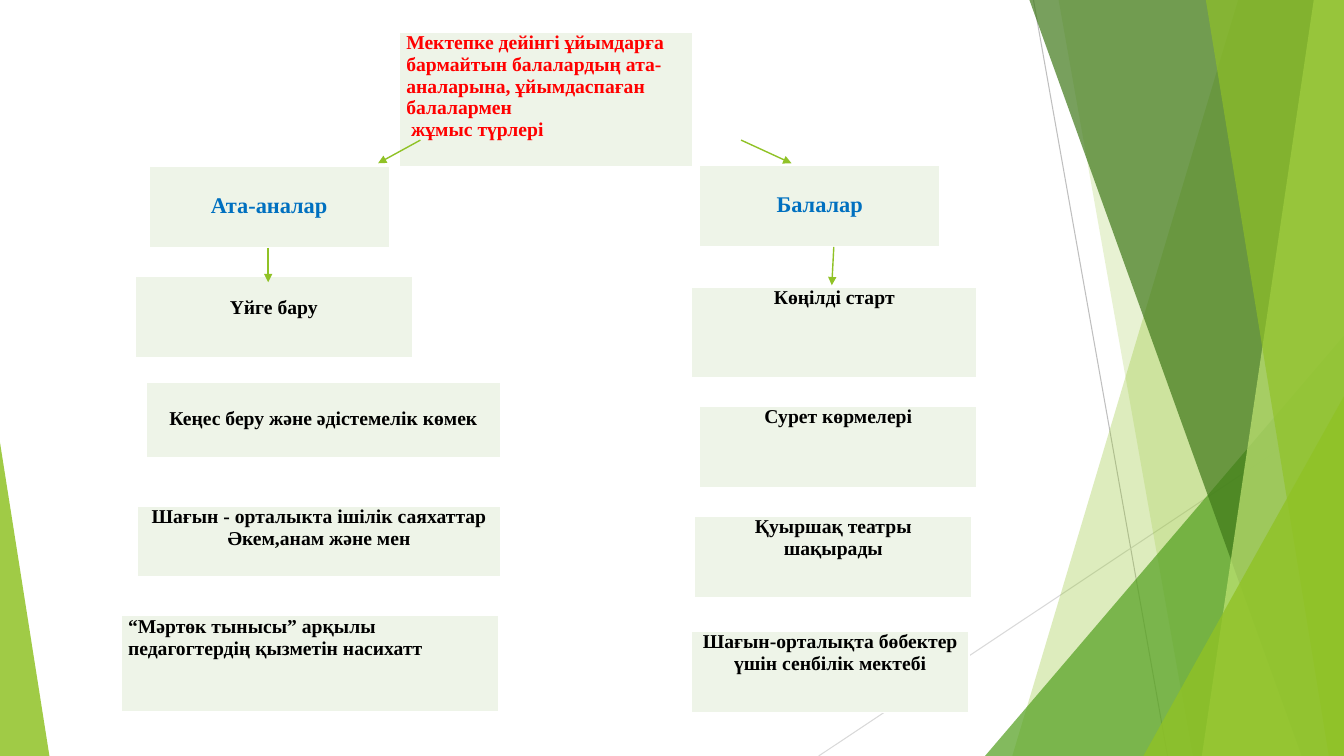
import pptx
import pptx.dml.color
import pptx.enum.shapes
import pptx.enum.text
import pptx.oxml
import pptx.oxml.ns
import pptx.util
from pptx.util import Inches

WIDE, HIGH = 13.33, 7.5
RED, BLUE, BLACK = "FF0000", "0070C0", "000000"
GREEN, PALE, WHITE = "90C226", "EEF4E8", "FFFFFF"
LEFT = pptx.enum.text.PP_ALIGN.LEFT
MID = pptx.enum.text.PP_ALIGN.CENTER

# Background, back to front: thin lines, then panels and triangles
RAYS = [
    ((10.25, 0), (11.58, HIGH), "BFBFBF"),
    ((WIDE, 4.03), (8.12, HIGH), "D9D9D9"),
]
# Panels reach the right edge: top x, bottom x, colour, opacity in percent
# Triangles: left, top, width, place of the tip, colour, opacity
DECOR = [
    ("panel", (12.28, 10.04), GREEN, 30),
    ("panel", (10.5, 11.83), GREEN, 20),
    ("peak", (9.77, 3.33, 3.56, 1), "54A021", 72),
    ("panel", (10.21, 12.91), "3F7819", 70),
    ("panel", (13.03, 11.92), "C0E474", 70),
    ("panel", (11.96, 13.18), GREEN, 65),
    ("peak", (11.34, 3.93, 1.99, 1), GREEN, 80),
    ("peak", (0, 4.39, 0.49, 0), GREEN, 85),
]

# Cards: place and size, space above the text, paragraphs, size, colour, alignment
CARDS = [
    ((3.96, 0.32, 2.91, 1.33), 0,
     ["Мектепке дейінгі ұйымдарға бармайтын балалардың ата-аналарына, "
      "ұйымдаспаған балалармен", " жұмыс түрлері"], 14, RED, LEFT),
    ((1.48, 1.65, 2.38, 0.81), 0.27, ["Ата-аналар"], 16, BLUE, MID),
    ((6.94, 1.64, 2.38, 0.81), 0.27, ["Балалар"], 16, BLUE, MID),
    ((1.34, 2.74, 2.75, 0.81), 0.21, ["Үйге бару"], 14, BLACK, MID),
    ((1.45, 3.79, 3.52, 0.75), 0.26,
     ["Кеңес беру және әдістемелік көмек"], 14, BLACK, MID),
    ((1.36, 5.02, 3.61, 0.7), 0,
     ["Шағын - орталыкта ішілік саяхаттар Әкем,анам және мен"], 14, BLACK, MID),
    ((1.2, 6.11, 3.75, 0.95), 0,
     ["“Мәртөк тынысы” арқылы педагогтердің қызметін насихатт"], 14, BLACK, LEFT),
    ((6.86, 2.85, 2.83, 0.9), 0, ["Көңілді старт"], 14, BLACK, MID),
    ((6.94, 4.03, 2.75, 0.81), 0, ["Сурет көрмелері"], 14, BLACK, MID),
    ((6.89, 5.12, 2.75, 0.81), 0, ["Қуыршақ театры", "шақырады"], 14, BLACK, MID),
    ((6.86, 6.26, 2.75, 0.81), 0,
     ["Шағын-орталықта бөбектер үшін сенбілік мектебі"], 14, BLACK, MID),
]
ARROWS = [
    ((4.17, 1.39), (3.75, 1.62)),
    ((7.35, 1.39), (7.85, 1.62)),
    ((8.27, 2.45), (8.25, 2.83)),
    ((2.66, 2.46), (2.66, 2.8)),
]


def paint(fill, color):
    fill.solid()
    fill.fore_color.rgb = pptx.dml.color.RGBColor.from_string(color)


def node(xml):
    """Make an XML element in the drawing namespace."""
    tag, rest = xml.split(" ", 1)
    space = pptx.oxml.ns.nsdecls("a")
    return pptx.oxml.parse_xml(f"{tag} {space} {rest}")


def draw_line(start, end, color, width, arrow=False):
    kind = pptx.enum.shapes.MSO_CONNECTOR.STRAIGHT
    line = shapes.add_connector(kind, *map(Inches, start + end))
    paint(line.line.fill, color)
    line.line.width = pptx.util.Pt(width)
    props = line._element.spPr
    props.append(node("<a:effectLst />"))
    if arrow:
        props.find(pptx.oxml.ns.qn("a:ln")).append(
            node('<a:tailEnd type="triangle"/>'))


def draw_decor(kind, place, color, alpha):
    if kind == "panel":
        top, base = place
        pen = shapes.build_freeform(Inches(top), 0, scale=1.0)
        ends = [(WIDE, 0), (WIDE, HIGH), (base, HIGH)]
        pen.add_line_segments([(Inches(x), Inches(y)) for x, y in ends])
        shape = pen.convert_to_shape()
    else:
        x, y, w, tip = place
        shape = shapes.add_shape(
            pptx.enum.shapes.MSO_SHAPE.ISOSCELES_TRIANGLE,
            *map(Inches, (x, y, w, HIGH - y)))
        shape.adjustments[0] = tip
    paint(shape.fill, color)
    tint = shape._element.spPr.find(".//" + pptx.oxml.ns.qn("a:srgbClr"))
    tint.append(node(f'<a:alpha val="{alpha * 1000}"/>'))
    shape.line.fill.background()
    shape.shadow.inherit = False


def draw_card(box, gap, lines, size, color, align):
    table = shapes.add_table(1, 1, *map(Inches, box)).table
    table.first_row = table.horz_banding = False
    cell = table.cell(0, 0)
    paint(cell.fill, PALE)
    props = cell._tc.get_or_add_tcPr()
    for spot, side in enumerate("LRTB"):
        props.insert(spot, node(
            f'<a:ln{side} w="12700"><a:solidFill><a:srgbClr val="{WHITE}"/>'
            f'</a:solidFill></a:ln{side}>'))
    cell.margin_left = cell.margin_right = Inches(0.07)
    cell.margin_top, cell.margin_bottom = Inches(gap), 0
    frame = cell.text_frame
    for i, words in enumerate(lines):
        para = frame.add_paragraph() if i else frame.paragraphs[0]
        para.alignment = align
        run = para.add_run()
        run.text = words
        font = run.font
        font.name, font.size, font.bold = "Times New Roman", pptx.util.Pt(size), True
        paint(font.fill, color)


deck = pptx.Presentation()
deck.slide_width, deck.slide_height = Inches(WIDE), Inches(HIGH)
slide = deck.slides.add_slide(deck.slide_layouts[6])
paint(slide.background.fill, WHITE)
shapes = slide.shapes

for start, end, color in RAYS:
    draw_line(start, end, color, 0.75)
for item in DECOR:
    draw_decor(*item)
for card in CARDS:
    draw_card(*card)
for start, end in ARROWS:
    draw_line(start, end, GREEN, 1, arrow=True)

deck.save("out.pptx")
